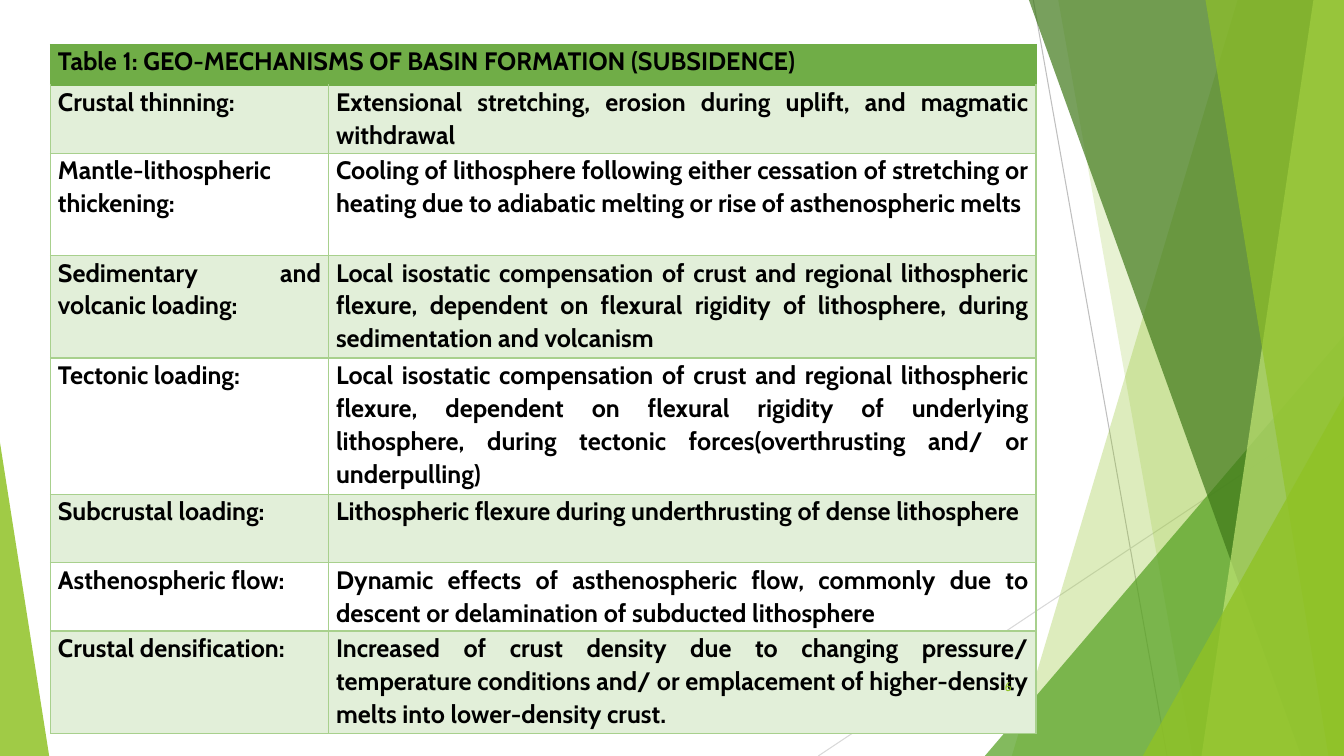
from dataclasses import dataclass

from lxml.etree import SubElement
from pptx import Presentation
from pptx.dml.color import RGBColor
from pptx.enum.shapes import MSO_CONNECTOR as ConnectorType, MSO_SHAPE as ShapeType
from pptx.enum.text import MSO_ANCHOR as Anchor, PP_ALIGN as Align
from pptx.oxml.ns import qn
from pptx.shapes.autoshape import Shape
from pptx.slide import Slide
from pptx.table import _Cell as Cell
from pptx.text.text import _Paragraph as Paragraph
from pptx.util import Cm, Pt

WIDTH, HEIGHT = 33.87, 19.05


@dataclass(frozen=True)
class Theme:
    font: str = "Cabin"
    body_size: int = 18
    number_size: int = 9
    ink: str = "000000"
    lime: str = "90C226"
    leaf: str = "54A021"
    forest: str = "3F7819"
    pale_lime: str = "C0E474"
    header: str = "70AD47"
    band: str = "E2EFD9"
    border: str = "A8D08D"
    ray: str = "BFBFBF"
    light_ray: str = "D9D9D9"


THEME = Theme()


@dataclass(frozen=True)
class Ray:
    start: tuple[float, float]
    end: tuple[float, float]
    color: str


@dataclass(frozen=True)
class Panel:
    top_x: float
    bottom_x: float
    color: str
    opacity: int


@dataclass(frozen=True)
class Wedge:
    left: float
    top: float
    width: float
    apex: float
    color: str
    opacity: int


@dataclass(frozen=True)
class Mechanism:
    name: str
    effect: str
    lines: int


RAYS = [
    Ray((26.04, 0), (29.41, HEIGHT), THEME.ray),
    Ray((WIDTH, 10.24), (20.62, HEIGHT), THEME.light_ray),
]

FACETS = [
    Panel(31.19, 25.5, THEME.lime, 30),
    Panel(26.67, 30.05, THEME.lime, 20),
    Wedge(24.82, 8.46, 9.05, 1, THEME.leaf, 72),
    Panel(25.93, 32.79, THEME.forest, 70),
    Panel(33.1, 30.28, THEME.pale_lime, 70),
    Panel(30.38, 33.48, THEME.lime, 65),
    Wedge(28.8, 9.98, 5.07, 1, THEME.lime, 80),
    Wedge(0, 11.15, 1.24, 0, THEME.lime, 85),
]

TABLE_TITLE = "Table 1: GEO-MECHANISMS OF BASIN FORMATION (SUBSIDENCE)"
MECHANISMS = [
    Mechanism("Crustal thinning:",
              "Extensional stretching, erosion during uplift, and magmatic withdrawal", 2),
    Mechanism("Mantle-lithospheric thickening:",
              "Cooling of lithosphere following either cessation of stretching or heating "
              "due to adiabatic melting or rise of asthenospheric melts", 3),
    Mechanism("Sedimentary and volcanic loading:",
              "Local isostatic compensation of crust and regional lithospheric flexure, "
              "dependent on flexural rigidity of lithosphere, during sedimentation and "
              "volcanism", 3),
    Mechanism("Tectonic loading:",
              "Local isostatic compensation of crust and regional lithospheric flexure, "
              "dependent on flexural rigidity of underlying lithosphere, during tectonic "
              "forces(overthrusting and/ or underpulling)", 4),
    Mechanism("Subcrustal loading:",
              "Lithospheric flexure during underthrusting of dense lithosphere", 2),
    Mechanism("Asthenospheric flow:",
              "Dynamic effects of asthenospheric flow, commonly due to descent or "
              "delamination of subducted lithosphere", 2),
    Mechanism("Crustal densification:",
              "Increased of crust density due to changing pressure/ temperature conditions "
              "and/ or emplacement of higher-density melts into lower-density crust.", 3),
]
COLUMN_WIDTHS = (7.01, 17.83)
HEADER_HEIGHT, LINE_HEIGHT = 1.02, 0.86


def color_of(value: str) -> RGBColor:
    return RGBColor.from_string(value)


def draw_ray(slide: Slide, ray: Ray) -> None:
    connector = slide.shapes.add_connector(
        ConnectorType.STRAIGHT, *map(Cm, ray.start + ray.end))
    connector.line.color.rgb = color_of(ray.color)
    connector.line.width = Pt(0.75)
    SubElement(connector._element.spPr, qn("a:effectLst"))


def outline_panel(slide: Slide, panel: Panel) -> Shape:
    builder = slide.shapes.build_freeform(Cm(panel.top_x), Cm(0))
    corners = [(WIDTH, 0), (WIDTH, HEIGHT), (panel.bottom_x, HEIGHT)]
    builder.add_line_segments([(Cm(x), Cm(y)) for x, y in corners])
    return builder.convert_to_shape()


def outline_wedge(slide: Slide, wedge: Wedge) -> Shape:
    shape = slide.shapes.add_shape(
        ShapeType.ISOSCELES_TRIANGLE, Cm(wedge.left), Cm(wedge.top),
        Cm(wedge.width), Cm(HEIGHT - wedge.top))
    shape.adjustments[0] = wedge.apex
    return shape


def draw_facet(slide: Slide, facet: Panel | Wedge) -> None:
    outline = outline_panel if isinstance(facet, Panel) else outline_wedge
    shape = outline(slide, facet)
    shape.shadow.inherit = False
    shape.line.fill.background()
    shape.fill.solid()
    shape.fill.fore_color.rgb = color_of(facet.color)
    color = shape._element.spPr.find(qn("a:solidFill")).find(qn("a:srgbClr"))
    SubElement(color, qn("a:alpha"), val=str(facet.opacity * 1000))


def format_text(paragraph: Paragraph, size: int, color: str, bold: bool) -> None:
    for run in paragraph.runs:
        run.font.name = THEME.font
        run.font.size = Pt(size)
        run.font.bold = bold
        run.font.color.rgb = color_of(color)


def style_cell(cell: Cell, fill: str | None, border: str, top_border: str) -> None:
    properties = cell._tc.get_or_add_tcPr()
    for side in ("L", "R", "T", "B"):
        line = SubElement(properties, qn(f"a:ln{side}"), w=str(Pt(1)))
        solid = SubElement(line, qn("a:solidFill"))
        SubElement(solid, qn("a:srgbClr"), val=top_border if side == "T" else border)
    if fill:
        cell.fill.solid()
        cell.fill.fore_color.rgb = color_of(fill)
    else:
        cell.fill.background()
    cell.margin_left = cell.margin_right = Cm(0.19)
    cell.margin_top = cell.margin_bottom = Cm(0)
    paragraph = cell.text_frame.paragraphs[0]
    paragraph.alignment = Align.JUSTIFY
    paragraph.line_spacing = 1.07
    paragraph.space_after = Pt(8)
    format_text(paragraph, THEME.body_size, THEME.ink, True)


def draw_table(slide: Slide) -> None:
    heights = [HEADER_HEIGHT] + [item.lines * LINE_HEIGHT for item in MECHANISMS]
    table = slide.shapes.add_table(
        len(heights), len(COLUMN_WIDTHS), Cm(1.27), Cm(1.12),
        Cm(sum(COLUMN_WIDTHS)), Cm(sum(heights))).table
    table.first_row = table.horz_banding = False
    for column, width in zip(table.columns, COLUMN_WIDTHS):
        column.width = Cm(width)
    for row, height in zip(table.rows, heights):
        row.height = Cm(height)
    table.cell(0, 0).merge(table.cell(0, 1))
    table.cell(0, 0).text_frame.text = TABLE_TITLE
    for cell in table.rows[0].cells:
        style_cell(cell, THEME.header, THEME.header, THEME.header)
    for index, item in enumerate(MECHANISMS, start=1):
        fill = THEME.band if index % 2 else None
        top_border = THEME.header if index == 1 else THEME.border
        for cell, text in zip(table.rows[index].cells, (item.name, item.effect)):
            cell.text_frame.text = text
            style_cell(cell, fill, THEME.border, top_border)


def draw_slide_number(slide: Slide, number: str) -> None:
    frame = slide.shapes.add_textbox(Cm(23.85), Cm(16.79), Cm(1.9), Cm(1.02)).text_frame
    frame.word_wrap = True
    frame.vertical_anchor = Anchor.MIDDLE
    frame.text = number
    paragraph = frame.paragraphs[0]
    paragraph.alignment = Align.RIGHT
    format_text(paragraph, THEME.number_size, THEME.lime, False)


def main() -> None:
    presentation = Presentation()
    presentation.slide_width, presentation.slide_height = Cm(WIDTH), Cm(HEIGHT)
    slide = presentation.slides.add_slide(presentation.slide_layouts[6])
    for ray in RAYS:
        draw_ray(slide, ray)
    for facet in FACETS:
        draw_facet(slide, facet)
    draw_table(slide)
    draw_slide_number(slide, "6")
    presentation.save("out.pptx")


if __name__ == "__main__":
    main()
